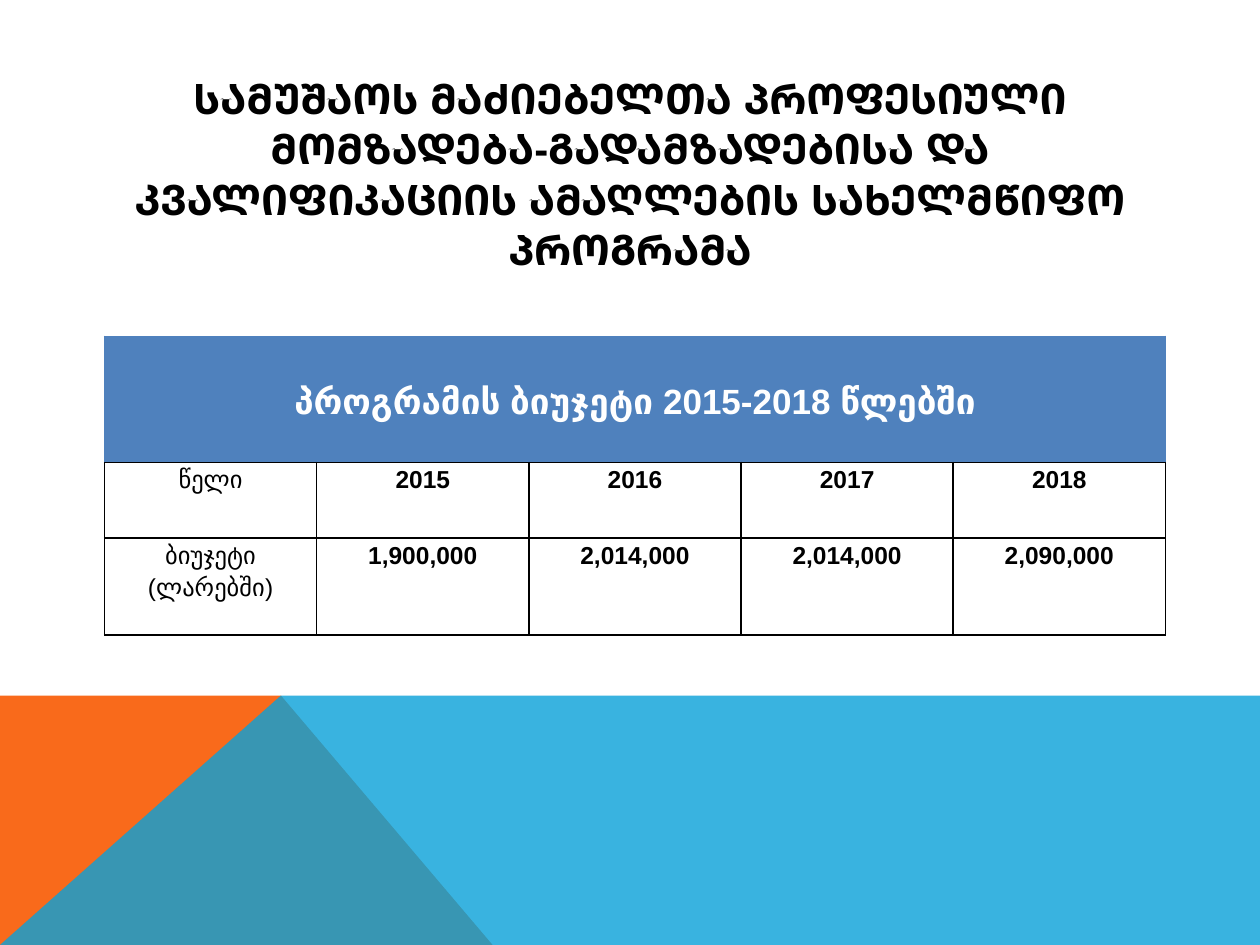
from pptx import Presentation
from pptx.dml.color import RGBColor
from pptx.enum.text import MSO_ANCHOR as Anchor, PP_ALIGN as Align
from pptx.oxml import parse_xml
from pptx.oxml.ns import nsdecls, qn
from pptx.oxml.xmlchemy import OxmlElement
from pptx.util import Inches, Pt

BLACK = RGBColor(0x00, 0x00, 0x00)
WHITE = RGBColor(0xFF, 0xFF, 0xFF)
HEADER_BLUE = RGBColor(0x4F, 0x81, 0xBD)
ORANGE = RGBColor(0xF9, 0x6A, 0x1B)
SKY = RGBColor(0x08, 0xA1, 0xD9)

HEADING = ("ᲡᲐᲛᲣᲨᲐᲝᲡ ᲛᲐᲫᲘᲔᲑᲔᲚᲗᲐ ᲞᲠᲝᲤᲔᲡᲘᲣᲚᲘ ᲛᲝᲛᲖᲐᲓᲔᲑᲐ-ᲒᲐᲓᲐᲛᲖᲐᲓᲔᲑᲘᲡᲐ ᲓᲐ "
           "ᲙᲕᲐᲚᲘᲤᲘᲙᲐᲪᲘᲘᲡ ᲐᲛᲐᲦᲚᲔᲑᲘᲡ ᲡᲐᲮᲔᲚᲛᲬᲘᲤᲝ ᲞᲠᲝᲒᲠᲐᲛᲐ")
CAPTION = "პროგრამის ბიუჯეტი 2015-2018 წლებში"
BUDGET = [
    ["წელი", "2015", "2016", "2017", "2018"],
    ["ბიუჯეტი (ლარებში)", "1,900,000", "2,014,000", "2,014,000", "2,090,000"],
]
ROW_SHARES = [1 / 7.5, 0.6 / 7.5, 0.77 / 7.5]


class BudgetSlide:
    """Hold the deck style and the current slide, with lengths as shares of its size."""

    font_name = "Arial"
    cell_format = {"margin_left": Inches(0.07), "margin_right": Inches(0.07),
                   "margin_top": 0, "margin_bottom": 0}

    def __init__(self, deck):
        self.width, self.height = deck.slide_width, deck.slide_height
        self.slide = deck.slides.add_slide(deck.slide_layouts[5])

    def box(self, left, top, width, height):
        return (int(left * self.width), int(top * self.height),
                int(width * self.width), int(height * self.height))

    def apply(self, target, values):
        for name, value in values.items():
            setattr(target, name, value)

    def put_text(self, frame, wording, size, color, bold, spacing=1.0):
        paragraph = frame.paragraphs[0]
        self.apply(paragraph, {"alignment": Align.CENTER, "line_spacing": spacing})
        run = paragraph.add_run()
        run.text = wording
        self.apply(run.font, {"name": self.font_name, "size": Pt(size), "bold": bold})
        run.font.color.rgb = color

    def title(self, wording, area):
        heading = self.slide.shapes.title
        self.apply(heading, dict(zip(("left", "top", "width", "height"), self.box(*area))))
        self.apply(heading.text_frame, {"word_wrap": True, "vertical_anchor": Anchor.MIDDLE})
        self.put_text(heading.text_frame, wording, 24, BLACK, True)

    def polygon(self, corners, color, opacity=100):
        start, *rest = [(int(x * self.width), int(y * self.height)) for x, y in corners]
        builder = self.slide.shapes.build_freeform(*start)
        builder.add_line_segments(rest, close=True)
        panel = builder.convert_to_shape()
        panel.shadow.inherit = False
        panel.fill.solid()
        panel.fill.fore_color.rgb = color
        panel.line.fill.background()
        if opacity < 100:
            alpha = OxmlElement("a:alpha")
            alpha.set("val", str(opacity * 1000))
            panel.element.spPr.find(f"{qn('a:solidFill')}/{qn('a:srgbClr')}").append(alpha)

    def borders(self, cell, colors):
        properties = cell._tc.get_or_add_tcPr()
        for place, (side, color) in enumerate(zip("LRTB", colors)):
            properties.insert(place, parse_xml(
                f'<a:ln{side} {nsdecls("a")} w="{Pt(1)}"><a:solidFill>'
                f'<a:srgbClr val="{color}"/></a:solidFill></a:ln{side}>'))

    def table(self, caption, rows, area, row_shares):
        columns = len(rows[0])
        grid = self.slide.shapes.add_table(len(rows) + 1, columns, *self.box(*area)).table
        self.apply(grid, {"first_row": False, "horz_banding": False})
        for row, share in zip(grid.rows, row_shares):
            row.height = int(share * self.height)
        for cell in grid.iter_cells():
            self.apply(cell, self.cell_format)
        banner = grid.cell(0, 0)
        banner.merge(grid.cell(0, columns - 1))
        banner.vertical_anchor = Anchor.MIDDLE
        self.put_text(banner.text_frame, caption, 20, WHITE, True, 1.15)
        for column in range(columns):
            cell = grid.cell(0, column)
            cell.fill.solid()
            cell.fill.fore_color.rgb = HEADER_BLUE
            self.borders(cell, [HEADER_BLUE] * 3 + [BLACK])
        for line, entries in enumerate(rows, 1):
            for column, entry in enumerate(entries):
                cell = grid.cell(line, column)
                cell.fill.background()
                self.borders(cell, [BLACK] * 4)
                self.put_text(cell.text_frame, entry, 14, BLACK, column > 0, 1.15)


def main():
    deck = Presentation()
    deck.slide_width, deck.slide_height = Inches(10), Inches(7.5)
    page = BudgetSlide(deck)
    horizon, peak = 5.52 / 7.5, 0.223
    page.polygon([(0, 1), (0, horizon), (peak, horizon), (0.391, 1)], ORANGE)
    page.polygon([(0, 1), (peak, horizon), (1, horizon), (1, 1)], SKY, 80)
    page.title(HEADING, (0.05, 0.1, 0.9, 1 / 6))
    page.table(CAPTION, BUDGET, (0.083, 2.67 / 7.5, 0.842, sum(ROW_SHARES)), ROW_SHARES)
    deck.save("out.pptx")


if __name__ == "__main__":
    main()
